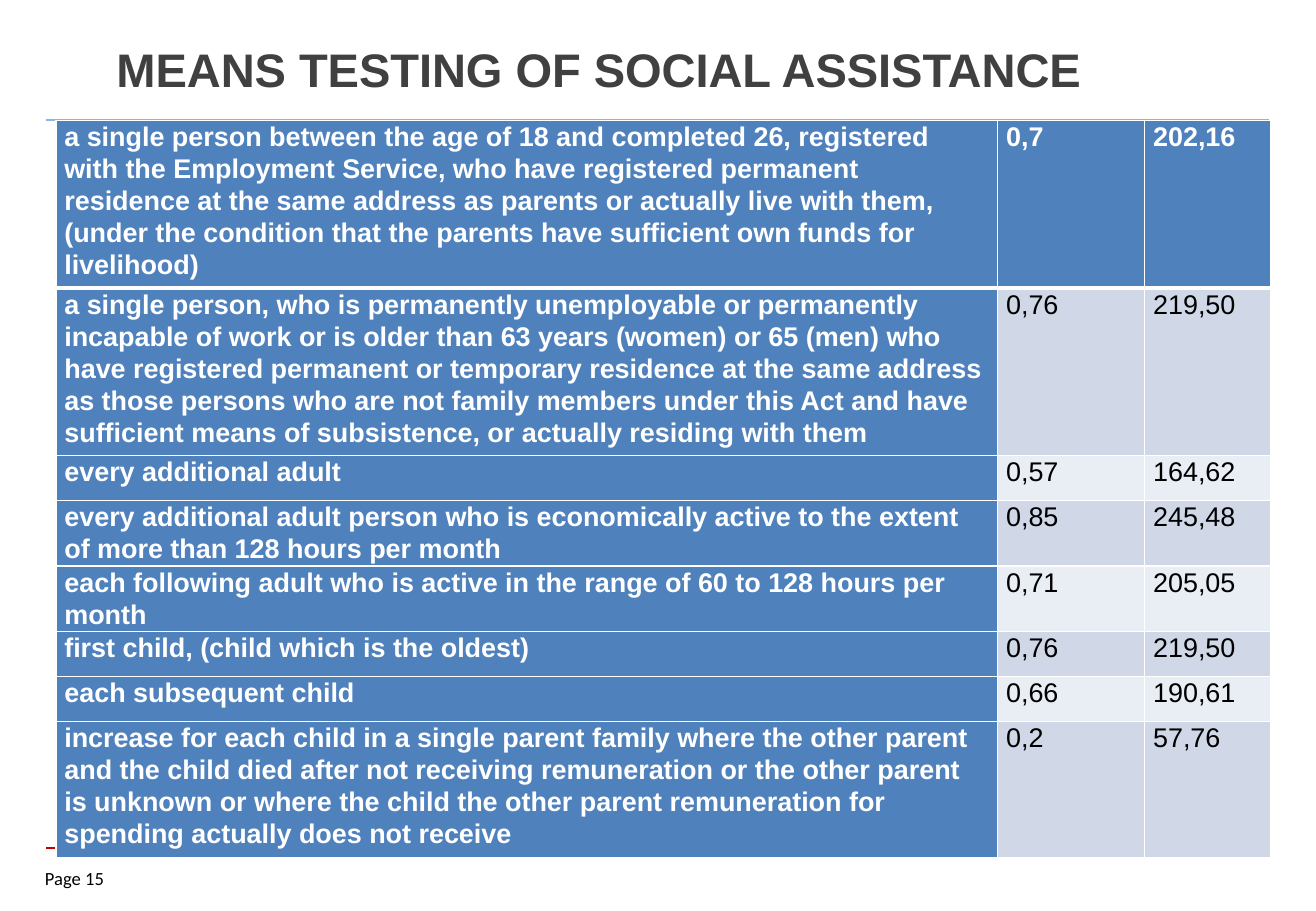
"""Build the slide on means testing of social assistance."""
from lxml.etree import SubElement
from pptx import Presentation
from pptx.dml.color import RGBColor as RGB
from pptx.enum.text import MSO_ANCHOR
from pptx.oxml.ns import qn
from pptx.util import Inches, Pt

WHITE = RGB(0xFF, 0xFF, 0xFF)
BLACK = RGB(0, 0, 0)
GREY = RGB(0x40, 0x40, 0x40)
RED = RGB(0xC0, 0, 0)
SKY = RGB(0x8E, 0xB4, 0xE3)
BLUE = RGB(0x4F, 0x81, 0xBD)
BANDS = [RGB(0xE9, 0xED, 0xF4), RGB(0xD0, 0xD8, 0xE8)]

COLUMNS = [7.75, 1.21, 1.04]
ROWS = [
    (1.38, "a single person between the age of 18 and completed 26, registered with the "
     "Employment Service, who have registered permanent residence at the same address as "
     "parents or actually live with them, (under the condition that the parents have "
     "sufficient own funds for livelihood)", "0,7", "202,16"),
    (1.38, "a single person, who is permanently unemployable or permanently incapable of work "
     "or is older than 63 years (women) or 65 (men) who have registered permanent or temporary "
     "residence at the same address as those persons who are not family members under this Act "
     "and have sufficient means of subsistence, or actually residing with them",
     "0,76", "219,50"),
    (0.37, "every additional adult", "0,57", "164,62"),
    (0.54, "every additional adult person who is economically active to the extent of more than "
     "128 hours per month", "0,85", "245,48"),
    (0.54, "each following adult who is active in the range of 60 to 128 hours per month",
     "0,71", "205,05"),
    (0.37, "first child, (child which is the oldest)", "0,76", "219,50"),
    (0.37, "each subsequent child", "0,66", "190,61"),
    (1.12, "increase for each child in a single parent family where the other parent and the "
     "child died after not receiving remuneration or the other parent is unknown or where the "
     "child the other parent remuneration for spending actually does not receive",
     "0,2", "57,76"),
]


def write(tf, text, color, **font):
    p = tf.paragraphs[0]
    r = p.add_run()
    r.text = text
    r.font.color.rgb = color
    for name, value in font.items():
        setattr(r.font, name, value)
    return p


prs = Presentation()
prs.slide_width, prs.slide_height = Inches(10.83), Inches(7.5)
s = prs.slides.add_slide(prs.slide_layouts[6])

for y, right, color, width in [(6.98, 10.46, RED, 1), (0.99, 10.44, SKY, 1.5)]:
    rule = s.shapes.add_connector(1, Inches(0.38), Inches(y), Inches(right), Inches(y))
    rule.line.color.rgb, rule.line.width = color, Pt(width)
    SubElement(rule._element.spPr, qn("a:effectLst"))

for text, box, inset, color, font in [
    ("Page 15", (0.37, 7.14, 0.73, 0.22), (0, 0), BLACK, dict(name="Calibri", size=Pt(11))),
    ("MEANS TESTING OF SOCIAL ASSISTANCE", (0.86, 0.29, 9.21, 0.71), (0.1, 0.04), GREY,
     dict(name="Arial", size=Pt(27.9), bold=True)),
]:
    tf = s.shapes.add_textbox(*map(Inches, box)).text_frame
    tf.word_wrap = True
    tf.margin_left = tf.margin_right = Inches(inset[0])
    tf.margin_top = tf.margin_bottom = Inches(inset[1])
    write(tf, text, color, **font)

table = s.shapes.add_table(len(ROWS), len(COLUMNS), Inches(0.46), Inches(0.99),
                           Inches(sum(COLUMNS)), Inches(sum(row[0] for row in ROWS))).table
for column, width in zip(table.columns, COLUMNS):
    column.width = Inches(width)

for i, (height, *texts) in enumerate(ROWS):
    table.rows[i].height = Inches(height)
    for j, text in enumerate(texts):
        cell = table.cell(i, j)
        strong = i == 0 or j == 0
        cell.margin_left = cell.margin_right = Inches(0.07)
        cell.margin_top = cell.margin_bottom = 0
        cell.vertical_anchor = MSO_ANCHOR.TOP
        p = write(cell.text_frame, text, WHITE if strong else BLACK,
                  name="Arial", size=Pt(16), bold=strong)
        p.line_spacing = Pt(19)
        tcPr = cell._tc.get_or_add_tcPr()
        for side in "LRTB":
            heavy = (i, side) in [(0, "B"), (1, "T")]
            ln = SubElement(tcPr, qn(f"a:ln{side}"), w=str(Pt(3 if heavy else 1)))
            SubElement(SubElement(ln, qn("a:solidFill")), qn("a:srgbClr"), val=str(WHITE))
        cell.fill.solid()
        cell.fill.fore_color.rgb = BLUE if strong else BANDS[i % 2]

prs.save("out.pptx")
